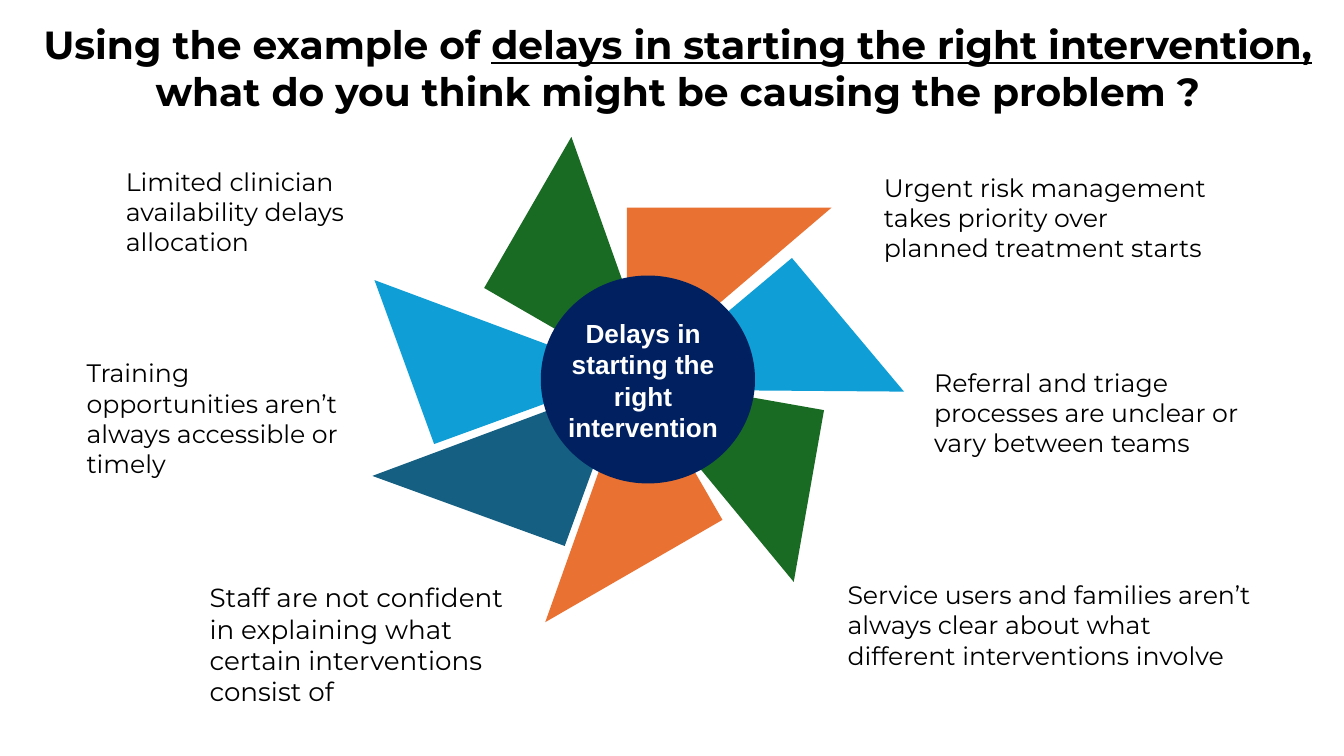
import dataclasses

import pptx
import pptx.dml.color
import pptx.enum.shapes
import pptx.enum.text
import pptx.util

Pt = pptx.util.Pt
SHAPE = pptx.enum.shapes.MSO_SHAPE
ALIGN = pptx.enum.text.PP_ALIGN
ANCHOR = pptx.enum.text.MSO_ANCHOR


@dataclasses.dataclass(frozen=True)
class Theme:
    font: str = "Montserrat"
    hub_font: str = "Arial"
    black: str = "000000"
    white: str = "FFFFFF"
    navy: str = "002060"
    orange: str = "E97132"
    blue: str = "0F9ED5"
    green: str = "196B24"
    teal: str = "156082"
    title: float = 28
    large: float = 18.7
    body: float = 18


def rgb(code):
    return pptx.dml.color.RGBColor.from_string(code)


class Board:
    def __init__(self, theme, slide):
        self.theme = theme
        self.slide = slide

    def shape(self, kind, box, color, turn=0, group=None):
        home = group or self.slide
        item = home.shapes.add_shape(kind, *map(Pt, box))
        item.shadow.inherit = False
        item.fill.solid()
        item.fill.fore_color.rgb = rgb(color)
        item.line.fill.background()
        item.rotation = turn
        return item

    def blade(self, group, mid, size, turn, color):
        """Draw a right triangle centred on mid, turned clockwise."""
        (x, y), (wide, high) = mid, size
        box = (x - wide / 2, y - high / 2, wide, high)
        self.shape(SHAPE.RIGHT_TRIANGLE, box, color, turn, group)

    def text(self, box, parts, *, size=None, font=None, color=None,
             bold=False, align=ALIGN.LEFT, anchor=ANCHOR.TOP):
        """Add a text box; parts is a string or a list of (text, underline)."""
        item = self.slide.shapes.add_textbox(*map(Pt, box))
        frame = item.text_frame
        frame.word_wrap = True
        frame.auto_size = pptx.enum.text.MSO_AUTO_SIZE.SHAPE_TO_FIT_TEXT
        frame.vertical_anchor = anchor
        para = frame.paragraphs[0]
        para.alignment = align
        if isinstance(parts, str):
            parts = [(parts, False)]
        for words, under in parts:
            run = para.add_run()
            run.text = words
            run.font.name = font or self.theme.font
            run.font.size = Pt(size or self.theme.body)
            run.font.bold = bold
            run.font.underline = under
            run.font.color.rgb = rgb(color or self.theme.black)


def main():
    deck = pptx.Presentation()
    deck.slide_width, deck.slide_height = Pt(960), Pt(540)
    theme = Theme()
    board = Board(theme, deck.slides.add_slide(deck.slide_layouts[6]))

    long, short = 146.2, 124.6
    flat, tall = (long, short), (short, long)
    blades = [
        ((520.9, 210.6), tall, theme.orange),
        ((549.7, 279), flat, theme.blue),
        ((505.8, 341.6), flat, theme.green),
        ((421.6, 353.9), tall, theme.orange),
        ((356, 306.4), tall, theme.teal),
        ((357.5, 233.6), flat, theme.blue),
        ((440.3, 188.3), flat, theme.green),
    ]
    wheel = board.slide.shapes.add_group_shape()
    for step, (mid, size, color) in enumerate(blades):
        board.blade(wheel, mid, size, (90 + 50 * step) % 360, color)

    board.shape(SHAPE.OVAL, (386.3, 196.8, 153, 148.5), theme.navy)
    board.text((392.4, 222.5, 133.9, 97.9),
               "Delays in starting the right intervention",
               size=theme.large, font=theme.hub_font, color=theme.white,
               bold=True, align=ALIGN.CENTER, anchor=ANCHOR.MIDDLE)

    board.text((8.6, 10.8, 951.2, 74.9), [
        ("Using the example of ", False),
        ("delays in starting the right intervention,", True),
        (" what do you think might be causing the problem ?", False),
    ], size=theme.title, bold=True, align=ALIGN.CENTER)

    causes = [
        ((624.2, 119.5, 246.2, 72.7), theme.body,
         "Urgent risk management takes priority over planned treatment starts"),
        ((660.2, 258.5, 262.8, 72.7), theme.body,
         "Referral and triage processes are unclear or vary between teams"),
        ((598.3, 410.4, 311.8, 72.7), theme.body,
         "Service users and families aren’t always clear about what "
         "different interventions involve"),
        ((142.6, 411.8, 241.9, 97.9), theme.large,
         "Staff are not confident in explaining what certain "
         "interventions consist of"),
        ((54.7, 252, 200.9, 94.3), theme.body,
         "Training opportunities aren’t always accessible or timely"),
        ((82.8, 115.2, 190.1, 72.7), theme.body,
         "Limited clinician availability delays allocation"),
    ]
    for box, size, words in causes:
        board.text(box, words, size=size)

    deck.save("out.pptx")


if __name__ == "__main__":
    main()
